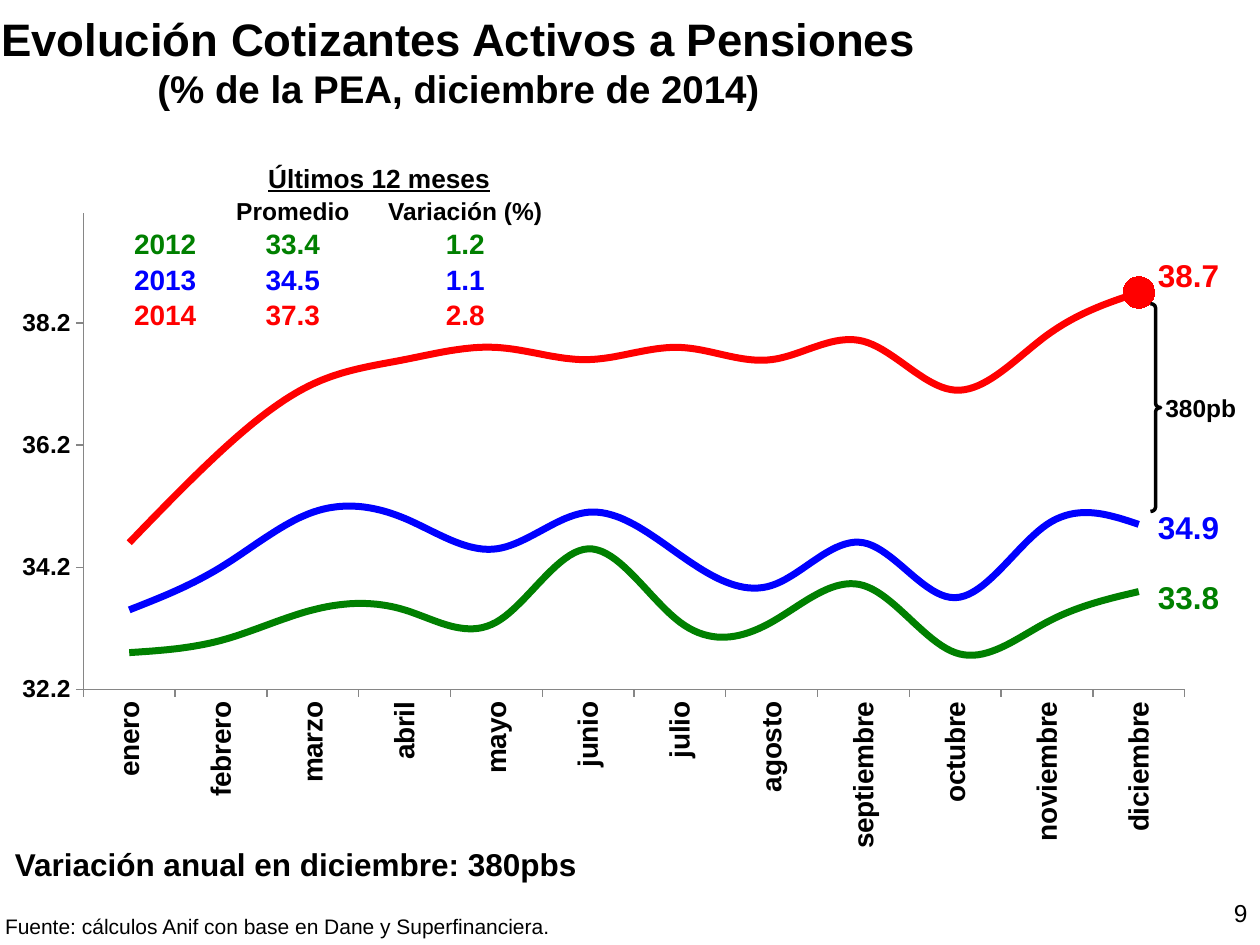
from lxml import etree
from pptx import Presentation
from pptx.chart.data import CategoryChartData
from pptx.dml.color import RGBColor
from pptx.enum import chart as ch, shapes, text
from pptx.oxml import parse_xml
from pptx.oxml.ns import nsdecls, qn
from pptx.util import Pt

COLORS = {"ink": "000000", "paper": "FFFFFF", "axis": "868686",
          "2012": "008000", "2013": "0000FF", "2014": "FF0000"}
FONT = "Arial"
NO_STYLE = "{2D5ABB26-0587-4C30-8999-92F81FD0307C}"

MONTHS = ["enero", "febrero", "marzo", "abril", "mayo", "junio", "julio",
          "agosto", "septiembre", "octubre", "noviembre", "diciembre"]
CONTRIBUTORS = {
    "2012": [32.8, 33, 33.5, 33.5, 33.3, 34.5, 33.3, 33.3, 33.9, 32.8, 33.3, 33.8],
    "2013": [33.5, 34.2, 35.1, 35, 34.5, 35.1, 34.4, 33.9, 34.6, 33.7, 34.9, 34.9],
    "2014": [34.6, 36.1, 37.2, 37.6, 37.8, 37.6, 37.8, 37.6, 37.9, 37.1, 38, 38.7],
}
SUMMARY = [("", "Últimos 12 meses", ""), ("", "Promedio", "Variación (%)"),
           ("2012", "33.4", "1.2"), ("2013", "34.5", "1.1"), ("2014", "37.3", "2.8")]


def rgb(name):
    return RGBColor.from_string(COLORS[name])


def style(font, size, color="ink", bold=True):
    font.name, font.size, font.bold = FONT, Pt(size), bold
    font.color.rgb = rgb(color)


def add_label(slide, box, words, sizes, color="ink", bold=True, wrap=True,
              align=text.PP_ALIGN.LEFT, anchor=text.MSO_ANCHOR.TOP, inset=None):
    """Add a one-paragraph text box; sizes has one entry per line."""
    frame = slide.shapes.add_textbox(*map(Pt, box)).text_frame
    frame.word_wrap, frame.vertical_anchor = wrap, anchor
    if inset is not None:
        frame.margin_left = frame.margin_right = Pt(inset)
        frame.margin_top = frame.margin_bottom = Pt(inset)
    paragraph = frame.paragraphs[0]
    paragraph.text = words
    paragraph.alignment = align
    for run, size in zip(paragraph.runs, sizes):
        style(run.font, size, color, bold)


def set_plot_layout(chart, x, y, w, h):
    """Fix the inner plot area, in fractions of the chart."""
    plot_area = chart._chartSpace.chart.plotArea
    for old in plot_area.findall(qn("c:layout")):
        plot_area.remove(old)
    layout = etree.Element(qn("c:layout"))
    manual = etree.SubElement(layout, qn("c:manualLayout"))
    settings = {"layoutTarget": "inner", "xMode": "edge", "yMode": "edge",
                "x": x, "y": y, "w": w, "h": h}
    for tag, value in settings.items():
        etree.SubElement(manual, qn("c:" + tag)).set("val", str(value))
    plot_area.insert(0, layout)


def add_line_chart(slide, box):
    data = CategoryChartData(number_format="0.0")
    data.categories = MONTHS
    for year, values in CONTRIBUTORS.items():
        data.add_series(year, values)
    chart = slide.shapes.add_chart(ch.XL_CHART_TYPE.LINE, *map(Pt, box), data).chart
    chart.has_legend = chart.has_title = False
    style(chart.font, 10, bold=False)
    chart.plots[0].vary_by_categories = False
    set_plot_layout(chart, 0.059, 0.062, 0.903, 0.686)

    # Axes
    months, share = chart.category_axis, chart.value_axis
    for axis, size in ((months, 16), (share, 14)):
        axis.has_major_gridlines = False
        axis.major_tick_mark = ch.XL_TICK_MARK.OUTSIDE
        axis.minor_tick_mark = ch.XL_TICK_MARK.NONE
        axis.format.line.color.rgb = rgb("axis")
        axis.format.line.width = Pt(0.75)
        style(axis.tick_labels.font, size)
    months._element.find(qn("c:txPr")).find(qn("a:bodyPr")).set("rot", "-5400000")
    share.minimum_scale, share.maximum_scale, share.major_unit = 32.2, 40, 2
    share.tick_labels.number_format = "#,##0.0"
    share.tick_labels.number_format_is_linked = False

    # Yearly lines
    for series in chart.plots[0].series:
        series.smooth = True
        series.marker.style = ch.XL_MARKER_STYLE.NONE
        series.format.line.color.rgb = rgb(series.name)
        series.format.line.width = Pt(4)

    # Dot on the latest value
    latest = chart.plots[0].series[-1].points[len(MONTHS) - 1]
    latest.format.line.color.rgb = rgb("2014")
    latest.format.line.width = Pt(4)
    latest.marker.style, latest.marker.size = ch.XL_MARKER_STYLE.CIRCLE, 18
    latest.marker.format.fill.solid()
    latest.marker.format.fill.fore_color.rgb = rgb("2014")
    latest.marker.format.line.color.rgb = rgb("2014")


def add_summary_table(slide, box):
    table = slide.shapes.add_table(len(SUMMARY), 3, *map(Pt, box)).table
    properties = table._tbl.tblPr
    for old in list(properties):
        properties.remove(old)
    properties.append(parse_xml(
        f"<a:tableStyleId {nsdecls('a')}>{NO_STYLE}</a:tableStyleId>"))
    table.first_row = table.horz_banding = False
    for column, width in zip(table.columns, (47.5, 98.5, 98.5)):
        column.width = Pt(width)
    for row, height in zip(table.rows, (19.4, 18, 20.2, 20.2, 20.2)):
        row.height = Pt(height)
    table.cell(0, 1).merge(table.cell(0, 2))

    for r, (row, size) in enumerate(zip(SUMMARY, (15, 14, 16, 16, 16))):
        for c, words in enumerate(row):
            cell = table.cell(r, c)
            cell.fill.solid()
            cell.fill.fore_color.rgb = rgb("paper")
            cell.margin_left = cell.margin_right = cell.margin_top = Pt(0.7)
            cell.margin_bottom = 0
            cell.vertical_anchor = text.MSO_ANCHOR.MIDDLE
            paragraph = cell.text_frame.paragraphs[0]
            paragraph.text = words
            paragraph.alignment = text.PP_ALIGN.CENTER
            style(paragraph.font, size, row[0] or "ink")
            for run in paragraph.runs:
                style(run.font, size, row[0] or "ink")
                run.font.underline = r == 0


def add_gap_brace(slide, box):
    """Brace between the last two December values, with its size beside it."""
    left, top, width, height = box
    brace = slide.shapes.add_shape(shapes.MSO_SHAPE.RIGHT_BRACE, *map(Pt, box))
    brace.shadow.inherit = False
    brace.adjustments[0], brace.adjustments[1] = 0.411, 0.5
    brace.fill.background()
    brace.line.color.rgb = rgb("ink")
    brace.line.width = Pt(2)
    add_label(slide, (left + 1.4, top + 47.5, 58.3, 24.5), "380pb", [14])


def add_end_values(slide, left, tops):
    for year, top in tops.items():
        add_label(slide, (left, top, 54, 29), str(CONTRIBUTORS[year][-1]), [18], year)


def main():
    deck = Presentation()
    deck.slide_width, deck.slide_height = Pt(720), Pt(540)
    slide = deck.slides.add_slide(deck.slide_layouts[6])

    add_line_chart(slide, (6.5, 97.2, 697, 396.7))
    # Title, note, source and page number
    add_label(slide, (-11.5, 3.6, 547.2, 62.6),
              "Evolución Cotizantes Activos a Pensiones\v(% de la PEA, diciembre de 2014)",
              [26, 22], align=text.PP_ALIGN.CENTER, anchor=text.MSO_ANCHOR.MIDDLE)
    add_label(slide, (1.4, 479.5, 338.4, 29), "Variación anual en diciembre: 380pbs",
              [18], wrap=False)
    add_label(slide, (2.9, 522, 316.8, 14.4),
              "Fuente: cálculos Anif con base en Dane y Superfinanciera.",
              [12], bold=False, wrap=False, inset=0)
    add_label(slide, (671.8, 509.8, 48.2, 30.2), "9", [14], bold=False,
              align=text.PP_ALIGN.RIGHT)
    # Summary and December callouts over the chart
    add_summary_table(slide, (70.6, 92.2, 244.5, 98))
    add_gap_brace(slide, (657.4, 173.5, 5.8, 118.8))
    add_end_values(slide, 654.5, {"2014": 142.6, "2013": 286.6, "2012": 326.9})

    deck.save("out.pptx")


if __name__ == "__main__":
    main()
